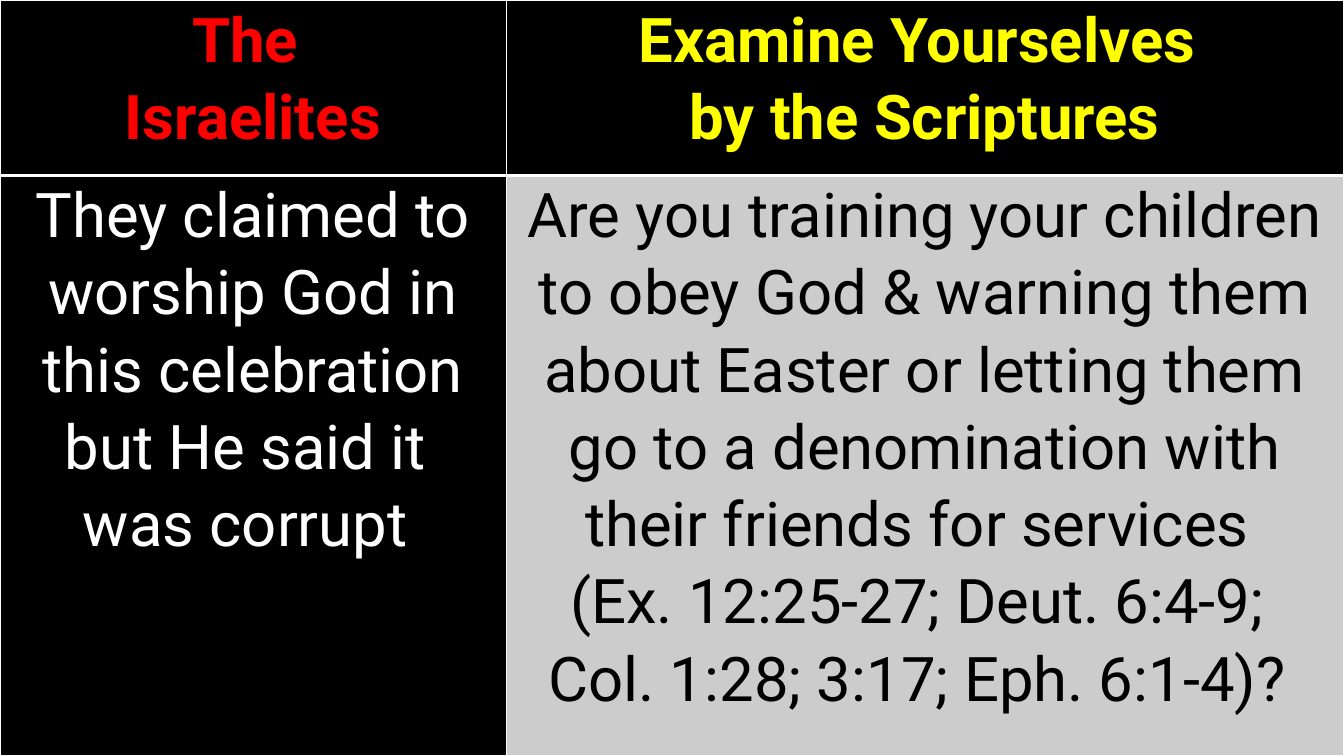
from lxml import etree
from pptx import Presentation
from pptx.dml.color import RGBColor
from pptx.enum.text import PP_ALIGN
from pptx.oxml.ns import qn
from pptx.util import Inches, Pt

CENTER = PP_ALIGN.CENTER

BLACK = RGBColor(0x00, 0x00, 0x00)
WHITE = RGBColor(0xFF, 0xFF, 0xFF)
RED = RGBColor(0xFF, 0x00, 0x00)
YELLOW = RGBColor(0xFF, 0xFF, 0x00)
GRAY = RGBColor(0xCC, 0xCC, 0xCC)

SLIDE_WIDTH, SLIDE_HEIGHT = 13.33, 7.5
ISRAELITES_WIDTH = 5.02
HEADER_HEIGHT = 1.74

CELL_MARGINS = {
    "margin_left": Inches(0.07),
    "margin_right": Inches(0.07),
    "margin_top": 0,
    "margin_bottom": 0,
}
PARAGRAPH_FORMAT = {"alignment": CENTER, "line_spacing": 1.07}
FONT_FORMAT = {"name": "Roboto", "size": Pt(44)}

HEADER_BORDERS = {"a:lnL": 1, "a:lnR": 1, "a:lnT": 1, "a:lnB": 3}
BODY_BORDERS = {"a:lnL": 1, "a:lnR": 1, "a:lnT": 3, "a:lnB": 1}

COMPARISON = [
    [
        (["The ", "Israelites"], RED, BLACK),
        (["Examine Yourselves ", "by the Scriptures"], YELLOW, BLACK),
    ],
    [
        (
            [
                "They claimed to worship God in this celebration but He said it ",
                "was corrupt ",
            ],
            WHITE,
            BLACK,
        ),
        (
            [
                "Are you training your children to obey God & warning them about "
                "Easter or letting them go to a denomination with their friends "
                "for services ",
                "(Ex. 12:25-27; Deut. 6:4-9; ",
                "Col. 1:28; 3:17; Eph. 6:1-4)? ",
            ],
            BLACK,
            GRAY,
        ),
    ],
]


def apply_format(target, values):
    for name, value in values.items():
        setattr(target, name, value)


def set_borders(cell, borders):
    properties = cell._tc.get_or_add_tcPr()
    for position, (side, points) in enumerate(borders.items()):
        border = etree.Element(qn(side), w=str(Pt(points)))
        fill = etree.SubElement(border, qn("a:solidFill"))
        etree.SubElement(fill, qn("a:srgbClr"), val=str(WHITE))
        properties.insert(position, border)


def fill_cell(cell, lines, text_color, fill_color, is_header):
    apply_format(cell, CELL_MARGINS)
    cell.fill.solid()
    cell.fill.fore_color.rgb = fill_color
    set_borders(cell, HEADER_BORDERS if is_header else BODY_BORDERS)
    frame = cell.text_frame
    for index, line in enumerate(lines):
        paragraph = frame.add_paragraph() if index else frame.paragraphs[0]
        apply_format(paragraph, PARAGRAPH_FORMAT)
        run = paragraph.add_run()
        run.text = line
        apply_format(run.font, FONT_FORMAT)
        run.font.bold = is_header
        run.font.color.rgb = text_color


def add_comparison(slide, left, top, width, height):
    comparison = slide.shapes.add_table(
        2, 2, Inches(left), Inches(top), Inches(width), Inches(height)
    ).table
    column_widths = ISRAELITES_WIDTH, width - ISRAELITES_WIDTH
    for column, column_width in zip(comparison.columns, column_widths):
        column.width = Inches(column_width)
    row_heights = HEADER_HEIGHT, height - HEADER_HEIGHT
    for row, row_height in zip(comparison.rows, row_heights):
        row.height = Inches(row_height)
    for row_index, entries in enumerate(COMPARISON):
        for column_index, entry in enumerate(entries):
            cell = comparison.cell(row_index, column_index)
            fill_cell(cell, *entry, is_header=row_index == 0)


def main():
    presentation = Presentation()
    presentation.slide_width = Inches(SLIDE_WIDTH)
    presentation.slide_height = Inches(SLIDE_HEIGHT)
    slide = presentation.slides.add_slide(presentation.slide_layouts[6])
    slide.background.fill.solid()
    slide.background.fill.fore_color.rgb = BLACK
    add_comparison(slide, 0, 0, SLIDE_WIDTH, SLIDE_HEIGHT)
    presentation.save("out.pptx")


if __name__ == "__main__":
    main()
